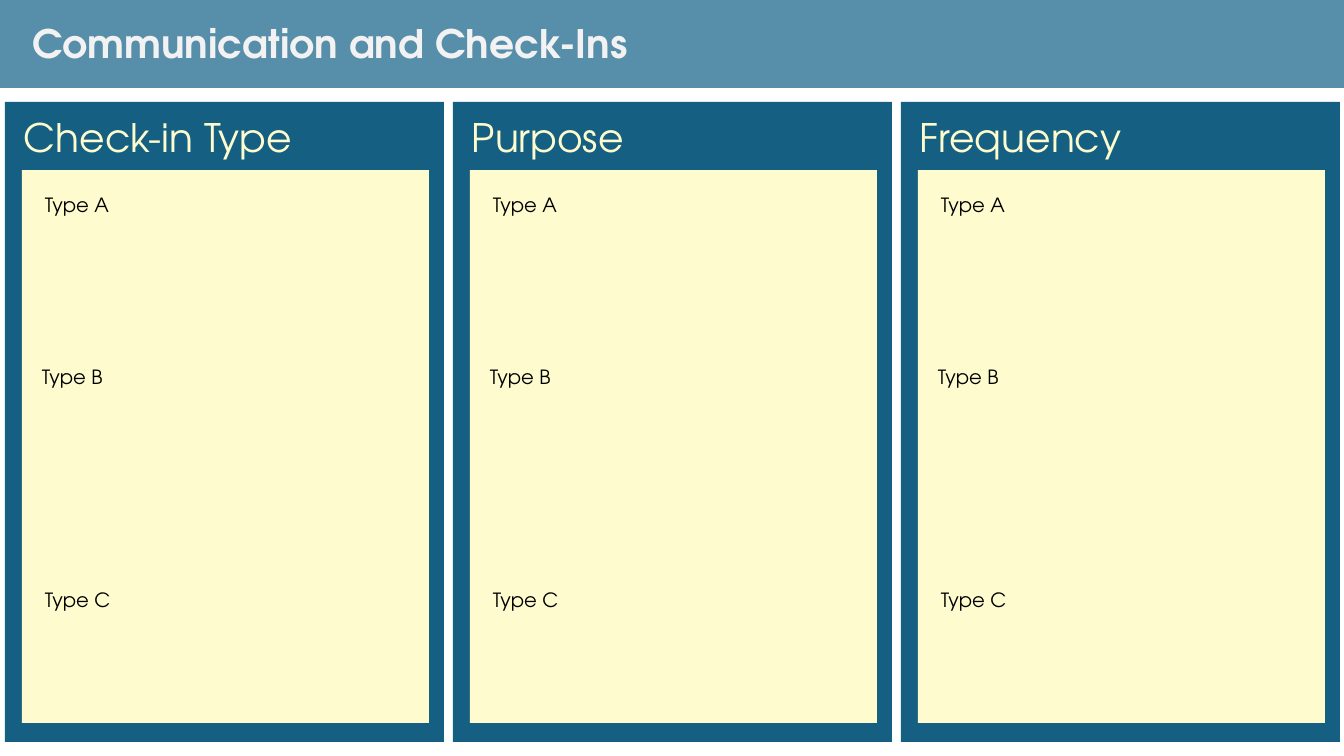
from pptx import Presentation
from pptx.dml.color import RGBColor
from pptx.enum.shapes import MSO_SHAPE
from pptx.enum.text import MSO_ANCHOR, PP_ALIGN
from pptx.util import Emu, Pt

RECTANGLE = MSO_SHAPE.RECTANGLE
TOP = MSO_ANCHOR.TOP
LEFT = PP_ALIGN.LEFT

TITLE = "Communication and Check-Ins"
HEADINGS = ["Check-in Type", "Purpose", "Frequency"]
ENTRIES = [("Type A", 35, 188), ("Type B", 32, 360), ("Type C", 35, 583)]

FONT = "TeX Gyre Adventor"
COLORS = {
    "band": "578EA9",
    "panel": "156082",
    "cream": "FEFCCE",
    "title": "F2F2F2",
    "text": "000000",
}

PX_PER_INCH = 100.8
SLIDE_SIZE = (1344, 756)
BAND = (0, 0, 1344, 88)
TITLE_BOX = (22, 14, 814, 57)
PANEL = (5, 102, 439, 640)
HEADING_BOX = (14, 108, 407, 57)
BODY = (22, 170, 407, 553)
ENTRY_SIZE = (386, 34)
COLUMN_PITCH = 448


def px(value):
    return Emu(round(value * 914400 / PX_PER_INCH))


def emu_box(box, offset=0):
    left, top, width, height = box
    return px(left + offset), px(top), px(width), px(height)


def add_rectangle(slide, box, color, offset=0):
    shape = slide.shapes.add_shape(RECTANGLE, *emu_box(box, offset))
    shape.shadow.inherit = False
    shape.fill.solid()
    shape.fill.fore_color.rgb = RGBColor.from_string(COLORS[color])
    shape.line.fill.background()
    return shape


def write_text(shape, text, size, color, bold=False):
    frame = shape.text_frame
    frame.text = text
    frame.word_wrap = True
    frame.vertical_anchor = TOP
    paragraph = frame.paragraphs[0]
    paragraph.alignment = LEFT
    paragraph.font.name = FONT
    paragraph.font.size = Pt(size)
    paragraph.font.bold = bold
    paragraph.font.color.rgb = RGBColor.from_string(COLORS[color])


def add_text(slide, box, text, size, color, offset):
    shape = slide.shapes.add_textbox(*emu_box(box, offset))
    write_text(shape, text, size, color)


def add_title(slide):
    title = slide.shapes.title
    title.left, title.top, title.width, title.height = emu_box(TITLE_BOX)
    write_text(title, TITLE, 28, "title", bold=True)
    band = add_rectangle(slide, BAND, "band")
    title._element.addprevious(band._element)


def add_column(slide, heading, offset):
    add_rectangle(slide, PANEL, "panel", offset)
    add_text(slide, HEADING_BOX, heading, 28, "cream", offset)
    add_rectangle(slide, BODY, "cream", offset)
    for label, left, top in ENTRIES:
        add_text(slide, (left, top, *ENTRY_SIZE), label, 14, "text", offset)


def main():
    presentation = Presentation()
    presentation.slide_width, presentation.slide_height = map(px, SLIDE_SIZE)
    slide = presentation.slides.add_slide(presentation.slide_layouts[5])
    add_title(slide)
    for index, heading in enumerate(HEADINGS):
        add_column(slide, heading, index * COLUMN_PITCH)
    presentation.save("out.pptx")


if __name__ == "__main__":
    main()
